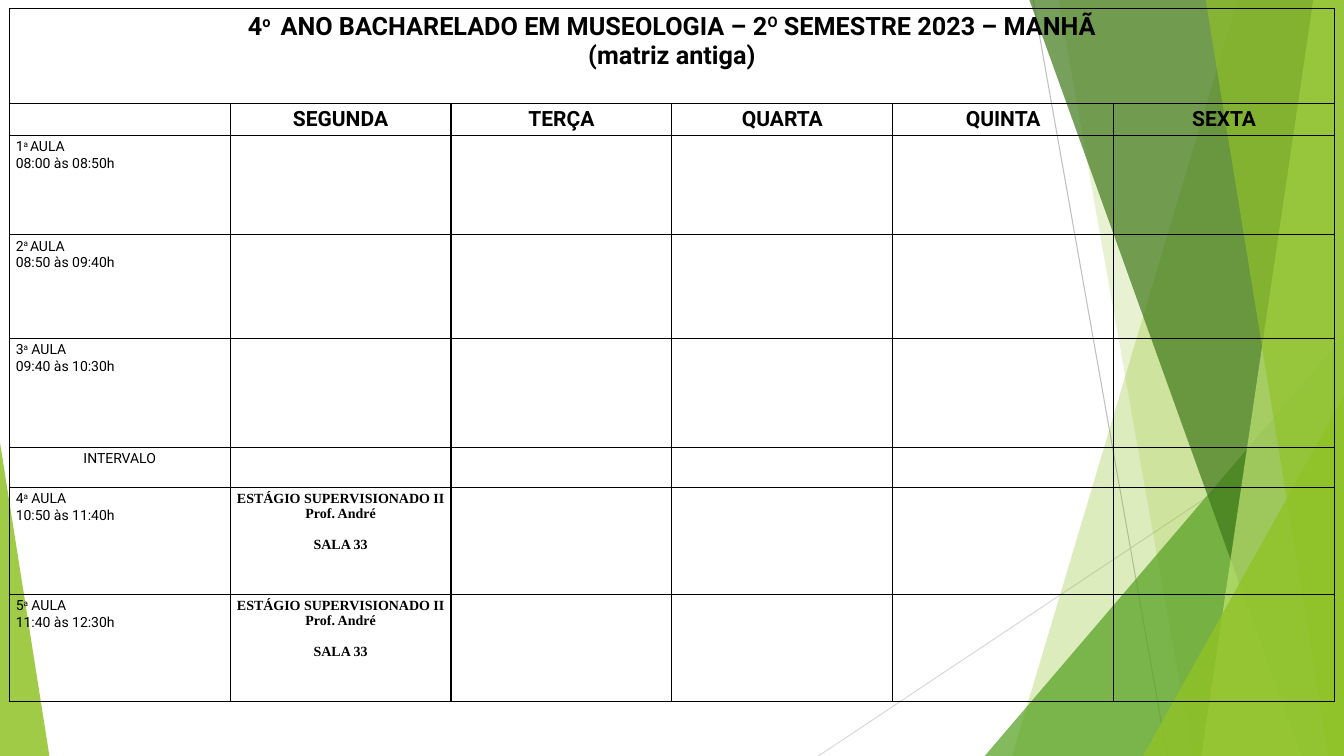
from lxml import etree
from pptx import Presentation
from pptx.dml.color import RGBColor
from pptx.enum import shapes, text
from pptx.oxml import ns
from pptx.util import Pt

# Content: text between carets is raised
TITLE = ["4^o ^ ANO BACHARELADO EM MUSEOLOGIA – 2^O^ SEMESTRE 2023 – MANHÃ",
         "(matriz antiga)"]
DAYS = ["SEGUNDA", "TERÇA", "QUARTA", "QUINTA", "SEXTA"]
INTERNSHIP = ["ESTÁGIO SUPERVISIONADO II", "Prof. André", "SALA 33"]
# Row height, label, Monday class
PERIODS = [
    (71, ["1^a ^AULA", "08:00 às 08:50h"], []),
    (74, ["2^a ^AULA", "08:50 às 09:40h"], []),
    (78, ["3^a^ AULA", "09:40 às 10:30h"], []),
    (28.5, ["INTERVALO"], []),
    (76.4, ["4^a^ AULA", "10:50 às 11:40h"], INTERNSHIP),
    (76.4, ["5^a^ AULA", "11:40 às 12:30h"], INTERNSHIP),
]
TITLE_HEIGHT, DAYS_HEIGHT = 68, 22.5
TABLE_LEFT, TABLE_TOP, COLUMN_WIDTH = 6.6, 6.1, 157.8

# Background, back to front
WIDTH, HEIGHT, BLEED = 960, 540, -0.6
RAYS = [((738, 0), (833.8, HEIGHT), "BFBFBF"),
        ((WIDTH, 290), (584.6, HEIGHT), "D9D9D9")]
# Bands reach the right edge: top x, bottom x, colour, opacity
# Triangles: left, top, width, apex, colour, opacity
FACETS = [
    ("band", 884.2, 722.9, "90C226", 30),
    ("band", 756, 851.8, "90C226", 20),
    ("triangle", 703.4, 239.8, 256.6, 1, "54A021", 72),
    ("band", 735.1, 929.5, "3F7819", 70),
    ("band", 938.2, 858.2, "C0E474", 70),
    ("band", 861.1, 949, "90C226", 65),
    ("triangle", 816.5, 283, 143.5, 1, "90C226", 80),
    ("triangle", 0, 316.1, 35.3, 0, "90C226", 85),
]


def rgb(code):
    return RGBColor.from_string(code)


def add_xml(parent, tag, **attributes):
    return etree.SubElement(parent, ns.qn(tag), attributes)


def draw_ray(slide, start, end, colour):
    ray = slide.shapes.add_connector(
        shapes.MSO_CONNECTOR.STRAIGHT, *map(Pt, start + end))
    ray.line.color.rgb = rgb(colour)
    ray.line.width = Pt(0.75)
    add_xml(ray._element.spPr, "a:effectLst")


def draw_facet(slide, kind, *values):
    *geometry, colour, opacity = values
    if kind == "band":
        top_x, bottom_x = geometry
        outline = slide.shapes.build_freeform(Pt(top_x), Pt(BLEED))
        corners = [(WIDTH, BLEED), (WIDTH, HEIGHT), (bottom_x, HEIGHT)]
        outline.add_line_segments([(Pt(x), Pt(y)) for x, y in corners])
        facet = outline.convert_to_shape()
    else:
        left, top, width, apex = geometry
        facet = slide.shapes.add_shape(
            shapes.MSO_SHAPE.ISOSCELES_TRIANGLE,
            Pt(left), Pt(top), Pt(width), Pt(HEIGHT - top))
        facet.adjustments[0] = apex
    facet.shadow.inherit = False
    facet.line.fill.background()
    facet.fill.solid()
    facet.fill.fore_color.rgb = rgb(colour)
    shade = facet._element.spPr.find(ns.qn("a:solidFill"))[0]
    add_xml(shade, "a:alpha", val=str(opacity * 1000))


def write(cell, lines, size=10, font="Roboto", bold=False, centred=True,
          last_gap=0):
    frame = cell.text_frame
    for i, line in enumerate(lines):
        paragraph = frame.paragraphs[0] if i == 0 else frame.add_paragraph()
        paragraph.alignment = (text.PP_ALIGN.CENTER if centred
                               else text.PP_ALIGN.LEFT)
        for j, piece in enumerate(line.split("^")):
            if not piece:
                continue
            run = paragraph.add_run()
            run.text = piece
            run.font.size = Pt(size)
            run.font.name = font
            run.font.bold = bold
            run.font.color.rgb = rgb("000000")
            if j % 2:
                run._r.get_or_add_rPr().set("baseline", "30000")
    if last_gap:
        frame.paragraphs[-1].space_before = Pt(last_gap)
    if not lines:
        # An empty cell must not stretch its row
        add_xml(frame.paragraphs[0]._p, "a:endParaRPr", sz=str(size * 100))


def format_cell(cell):
    cell.margin_left = cell.margin_right = Pt(4.7)
    cell.margin_top = cell.margin_bottom = Pt(2.5)
    properties = cell._tc.get_or_add_tcPr()
    for side in ("a:lnL", "a:lnR", "a:lnT", "a:lnB"):
        border = add_xml(properties, side, w=str(Pt(1)))
        add_xml(add_xml(border, "a:solidFill"), "a:srgbClr", val="000000")
    cell.fill.background()


def draw_timetable(slide):
    heights = [TITLE_HEIGHT, DAYS_HEIGHT] + [p[0] for p in PERIODS]
    columns = len(DAYS) + 1
    timetable = slide.shapes.add_table(
        len(heights), columns, Pt(TABLE_LEFT), Pt(TABLE_TOP),
        Pt(COLUMN_WIDTH * columns), Pt(sum(heights))).table
    timetable.first_row = timetable.horz_banding = False
    for column in timetable.columns:
        column.width = Pt(COLUMN_WIDTH)
    for row, height in zip(timetable.rows, heights):
        row.height = Pt(height)
    for cell in timetable.iter_cells():
        format_cell(cell)

    # Title and weekdays
    timetable.cell(0, 0).merge(timetable.cell(0, columns - 1))
    write(timetable.cell(0, 0), TITLE, size=18, bold=True)
    write(timetable.cell(1, 0), [])
    for c, day in enumerate(DAYS, 1):
        write(timetable.cell(1, c), [day], size=15, bold=True)

    # Class periods
    for r, (_, label, monday) in enumerate(PERIODS, 2):
        write(timetable.cell(r, 0), label, centred=len(label) == 1)
        write(timetable.cell(r, 1), monday, font="Times New Roman",
              bold=True, last_gap=11 if monday else 0)
        for c in range(2, columns):
            write(timetable.cell(r, c), [])


def main():
    deck = Presentation()
    deck.slide_width, deck.slide_height = Pt(WIDTH), Pt(HEIGHT)
    slide = deck.slides.add_slide(deck.slide_layouts[6])
    for ray in RAYS:
        draw_ray(slide, *ray)
    for facet in FACETS:
        draw_facet(slide, *facet)
    draw_timetable(slide)
    deck.save("out.pptx")


if __name__ == "__main__":
    main()
